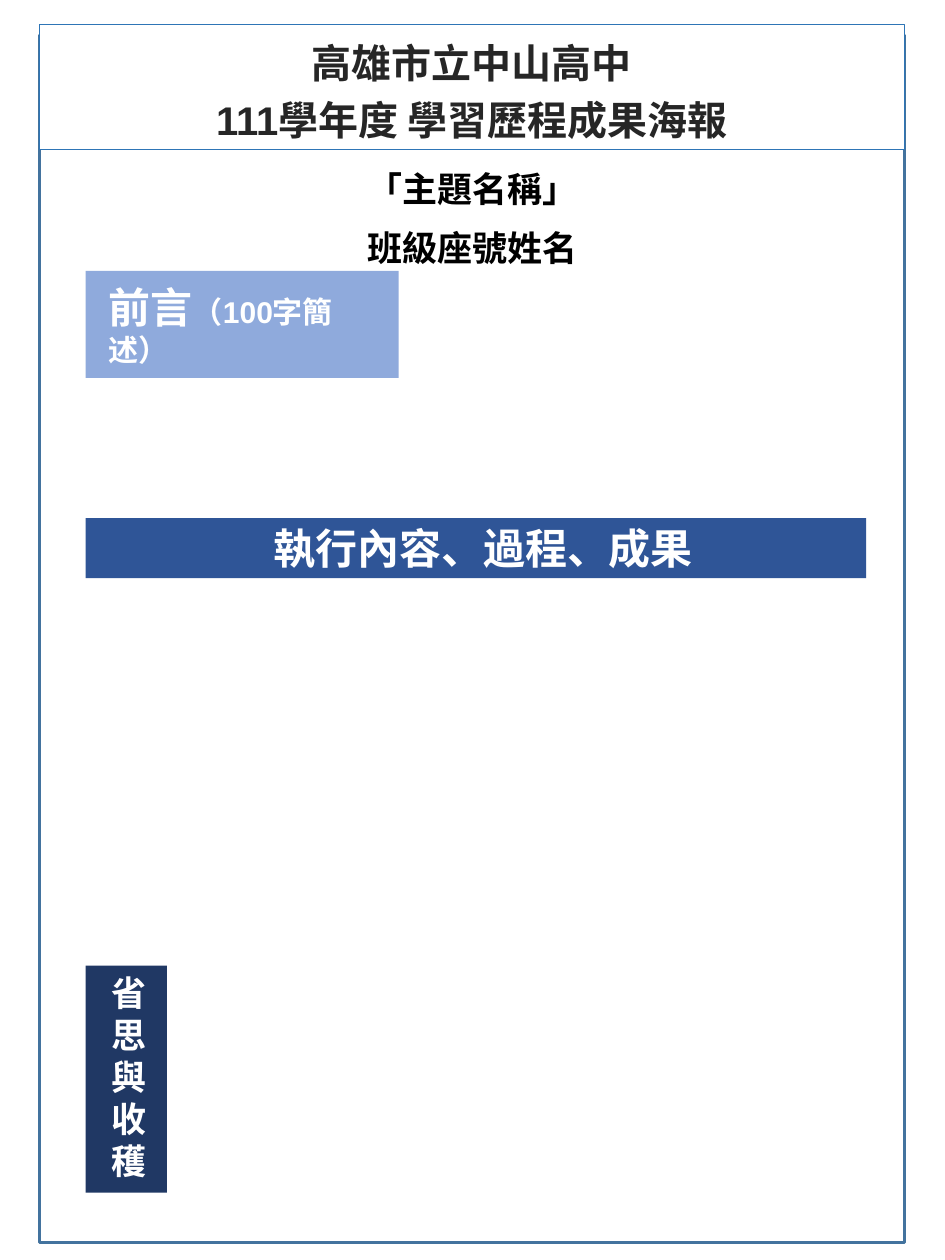
from lxml import etree
from pptx import Presentation
from pptx.dml.color import RGBColor
from pptx.enum.shapes import MSO_SHAPE as Kind
from pptx.enum.text import MSO_ANCHOR as Anchor, MSO_AUTO_SIZE as Fit, PP_ALIGN as Align
from pptx.oxml.ns import qn
from pptx.util import Pt

WHITE = RGBColor(0xFF, 0xFF, 0xFF)
BLACK = RGBColor(0x00, 0x00, 0x00)
GREY = RGBColor(0x26, 0x26, 0x26)
STEEL = RGBColor(0x43, 0x73, 0x9E)
BLUE = RGBColor(0x2E, 0x75, 0xB6)
PALE = RGBColor(0x8F, 0xAA, 0xDC)
MID = RGBColor(0x2F, 0x55, 0x97)
NAVY = RGBColor(0x20, 0x38, 0x64)

deck = Presentation()
deck.slide_width, deck.slide_height = Pt(756), Pt(1008)
slide = deck.slides.add_slide(deck.slide_layouts[6])


def add_box(left, top, width, height, fill, line=None, weight=0):
    box = slide.shapes.add_shape(Kind.RECTANGLE, Pt(left), Pt(top), Pt(width), Pt(height))
    box.shadow.inherit = False
    box.fill.solid()
    box.fill.fore_color.rgb = fill
    if line is None:
        box.line.fill.background()
    else:
        box.line.color.rgb = line
        box.line.width = Pt(weight)
    return box


def write(box, paras, size=28, color=WHITE, align=Align.LEFT, space=None, indent=0,
          anchor=Anchor.TOP, fit=Fit.NONE, inset=(7.2, 3.6)):
    """Each paragraph is a list of runs; a run is (text, size) or text in the common size."""
    frame = box.text_frame
    frame.word_wrap, frame.auto_size, frame.vertical_anchor = True, fit, anchor
    frame.margin_left = frame.margin_right = Pt(inset[0])
    frame.margin_top = frame.margin_bottom = Pt(inset[1])
    for i, parts in enumerate(paras):
        para = frame.paragraphs[0] if i == 0 else frame.add_paragraph()
        para.alignment = align
        if space:
            para.line_spacing = space
        if indent:
            props = para._p.get_or_add_pPr()
            props.set("marL", str(Pt(indent)))
            props.set("indent", "0")
        for part in parts:
            text, points = part if isinstance(part, tuple) else (part, size)
            for j, row in enumerate(text.split("\n")):
                if j:
                    para.add_line_break()
                run = para.add_run()
                run.text = row
                font = run.font
                font.name, font.size, font.bold = "Arial", Pt(points), True
                font.color.rgb = color


# Page frame, slightly see-through
EDGE, WIDE = 31.7, 692
frame = add_box(EDGE, 28, WIDE, 966, WHITE, STEEL, 2)
tint = frame._element.spPr.find(qn("a:solidFill"))[0]
etree.SubElement(tint, qn("a:alpha")).set("val", "85000")

# Heading
title = add_box(EDGE, 19.4, WIDE, 100, WHITE, BLUE, 0.75)
write(title, [["高雄市立中山高中\n111學年度 學習歷程成果海報"]], size=32, color=GREY,
      align=Align.CENTER, space=1.2, fit=Fit.SHAPE_TO_FIT_TEXT)

# Section labels share a left edge
LEFT, INDENT = 68.5, 11.5
intro = add_box(LEFT, 216.8, 250.5, 85.6, PALE)
write(intro, [["前言", ("（100字簡述）", 24)]], size=33.6, indent=INDENT, anchor=Anchor.MIDDLE)

work = add_box(LEFT, 414.6, 624.4, 48, MID)
write(work, [["執行內容、過程、成果"]], size=33.6, align=Align.CENTER, indent=INDENT,
      fit=Fit.SHAPE_TO_FIT_TEXT)

# Topic and author
topic = slide.shapes.add_textbox(Pt(156.2), Pt(116.6), Pt(444.2), Pt(103))
write(topic, [["「主題名稱」"], ["班級座號姓名"]], color=BLACK, align=Align.CENTER,
      space=1.41, fit=Fit.SHAPE_TO_FIT_TEXT)

# Narrow label: wraps to one character a line
gains = add_box(LEFT, 772.6, 65, 181.6, NAVY)
write(gains, [["省思與"], ["收穫"]], indent=INDENT, inset=(9.4, 4.3))

deck.save("out.pptx")
